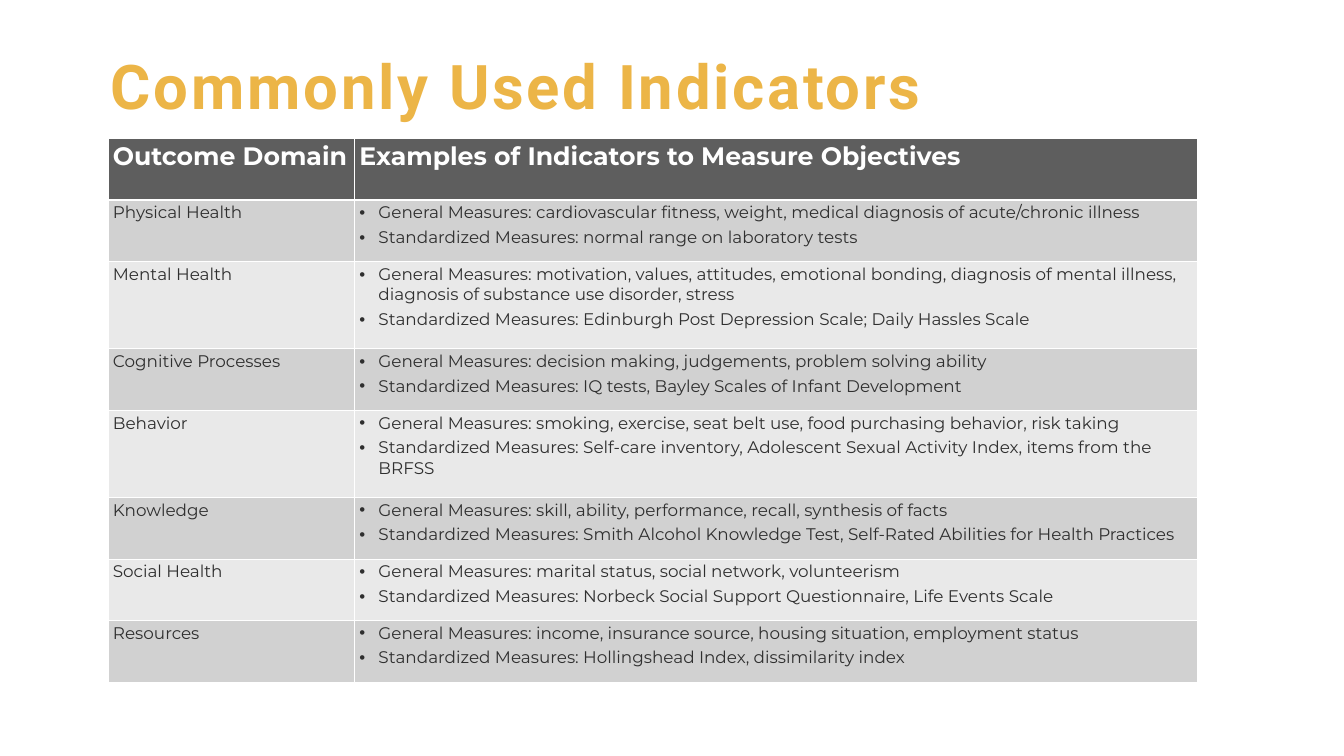
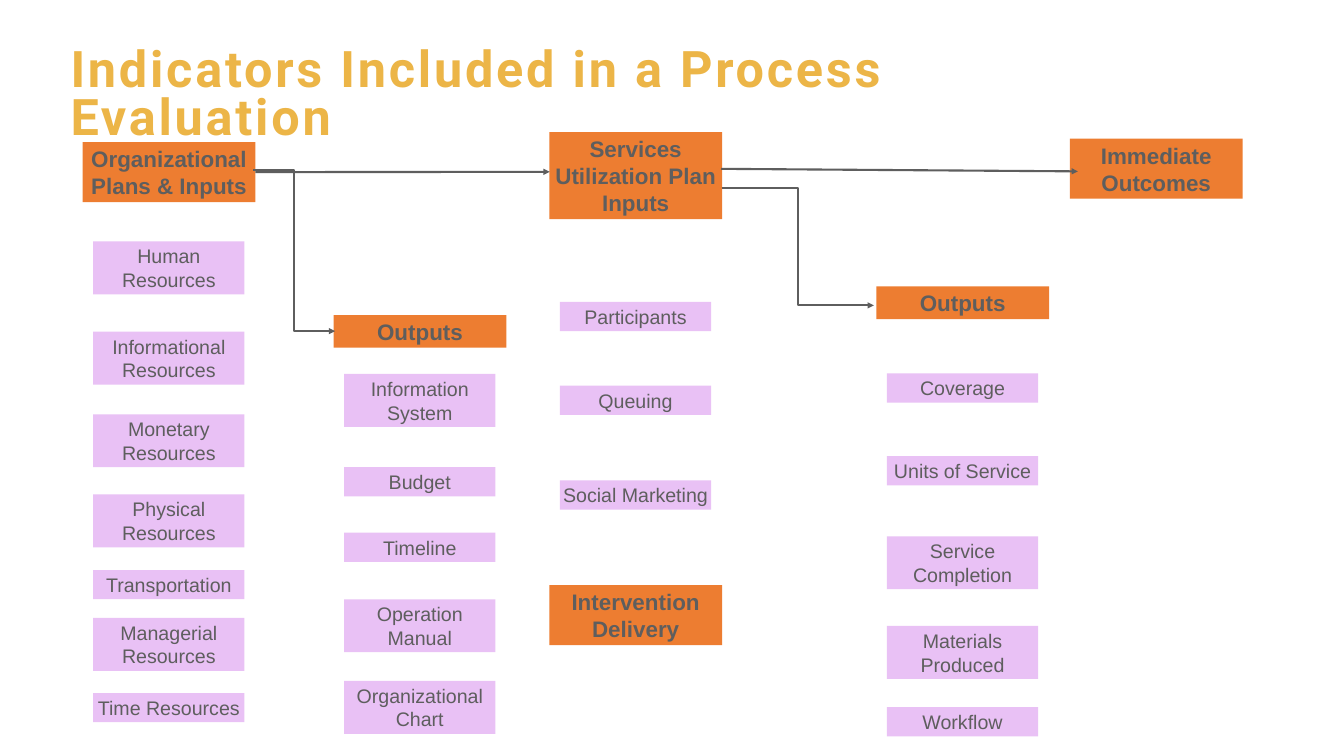
"""Build two slides on health indicators: a table and a process chart."""
import pptx
import pptx.dml.color
import pptx.enum.shapes
import pptx.enum.text
import pptx.oxml
import pptx.oxml.ns
import pptx.util

SCALE = 9144
GOLD, GREY, WHITE, INK = "ECB547", "5E5E5E", "FFFFFF", "2F2F2F"
ORANGE, LILAC = "ED7D31", "E9C1F5"
BANDS = ("D1D1D1", "E9E9E9")
INSET = 6
HEAD_WIDTH, ITEM_WIDTH, ITEM_SHIFT = 343, 300, 21

TABLE_HEAD = ("Outcome Domain", "Examples of Indicators to Measure Objectives")
LABELS = ("General Measures: ", "Standardized Measures: ")
DOMAINS = [
    ("Physical Health", 122,
     "cardiovascular fitness, weight, medical diagnosis of acute/chronic illness",
     "normal range on laboratory tests"),
    ("Mental Health", 173,
     "motivation, values, attitudes, emotional bonding, diagnosis of mental illness, "
     "diagnosis of substance use disorder, stress",
     "Edinburgh Post Depression Scale; Daily Hassles Scale"),
    ("Cognitive Processes", 122,
     "decision making, judgements, problem solving ability",
     "IQ tests, Bayley Scales of Infant Development"),
    ("Behavior", 173,
     "smoking, exercise, seat belt use, food purchasing behavior, risk taking",
     "Self-care inventory, Adolescent Sexual Activity Index, items from the BRFSS"),
    ("Knowledge", 122,
     "skill, ability, performance, recall, synthesis of facts",
     "Smith Alcohol Knowledge Test, Self-Rated Abilities for Health Practices"),
    ("Social Health", 122,
     "marital status, social network, volunteerism",
     "Norbeck Social Support Questionnaire, Life Events Scale"),
    ("Resources", 122,
     "income, insurance source, housing situation, employment status",
     "Hollingshead Index, dissimilarity index"),
]

STAGES = [
    (164, [("Organizational Plans & Inputs", 282, 2)],
     [("Human Resources", 479, 2), ("Informational Resources", 658, 2),
      ("Monetary Resources", 822, 2), ("Physical Resources", 981, 2),
      ("Transportation", 1131, 1), ("Managerial Resources", 1226, 2),
      ("Time Resources", 1375, 1)]),
    (662, [("Outputs", 625, 1)],
     [("Information System", 742, 2), ("Budget", 927, 1), ("Timeline", 1057, 1),
      ("Operation Manual", 1189, 2), ("Organizational Chart", 1351, 2)]),
    (1090, [("Services Utilization Plan Inputs", 262, 3),
            ("Intervention Delivery", 1161, 2)],
     [("Participants", 599, 1), ("Queuing", 765, 1), ("Social Marketing", 953, 1)]),
    (1739, [("Outputs", 568, 1)],
     [("Coverage", 741, 1), ("Units of Service", 905, 1),
      ("Service Completion", 1064, 2), ("Materials Produced", 1242, 2),
      ("Workflow", 1403, 1)]),
    (2123, [("Immediate Outcomes", 275, 2)], []),
]


def px(*sizes):
    """Turn px lengths into a list of EMU."""
    return [pptx.util.Emu(size * SCALE) for size in sizes]


def shade(code):
    """Turn a hex string into a colour."""
    return pptx.dml.color.RGBColor.from_string(code)


def paint(part, code):
    """Give a shape or cell a solid fill."""
    part.fill.solid()
    part.fill.fore_color.rgb = shade(code)


def style(para, font, size, code, bold=False):
    """Format every run of a paragraph."""
    for run in para.runs:
        run.font.name = font
        run.font.size = pptx.util.Pt(size)
        run.font.bold = bold
        run.font.color.rgb = shade(code)


def add_xml(parent, tag, place=None, **attrs):
    """Add a DrawingML element to a parent and return it."""
    node = pptx.oxml.parse_xml(f"<a:{tag} {pptx.oxml.ns.nsdecls('a')}/>")
    for key, value in attrs.items():
        node.set(key, str(value))
    parent.insert(len(parent) if place is None else place, node)
    return node


def set_frame(shape):
    """Set wrapping and insets of a shape and return its text frame."""
    frame = shape.text_frame
    frame.word_wrap = True
    frame.margin_left, frame.margin_top, frame.margin_right, frame.margin_bottom = px(*[INSET] * 4)
    return frame


def add_title(slide, text, left, top, size):
    """Add a gold title with wide letter spacing."""
    frame = set_frame(slide.shapes.add_textbox(*px(left, top, 2133, 165)))
    frame.text = text
    para = frame.paragraphs[0]
    para.line_spacing = 0.8
    style(para, "Roboto", size, GOLD, True)
    para.runs[0].font._element.set("spc", "400")


def add_box(slide, text, left, top, width, height, fill, size, bold):
    """Add a filled box with centred text."""
    box = slide.shapes.add_shape(pptx.enum.shapes.MSO_SHAPE.RECTANGLE,
                                 *px(left, top, width, height))
    box.shadow.inherit = False
    paint(box, fill)
    box.line.fill.background()
    frame = set_frame(box)
    frame.auto_size = pptx.enum.text.MSO_AUTO_SIZE.SHAPE_TO_FIT_TEXT
    frame.vertical_anchor = pptx.enum.text.MSO_ANCHOR.MIDDLE
    frame.text = text
    para = frame.paragraphs[0]
    para.alignment = pptx.enum.text.PP_ALIGN.CENTER
    style(para, "Arial", size, GREY, bold)
    return box


def add_head(slide, text, left, top, lines):
    """Add an orange stage heading."""
    return add_box(slide, text, left, top, HEAD_WIDTH, 11 + 54 * lines, ORANGE, 32, True)


def add_item(slide, text, left, top, lines):
    """Add a lilac indicator box."""
    return add_box(slide, text, left, top, ITEM_WIDTH, 11 + 47 * lines, LILAC, 28, False)


def add_arrow(slide, kind, *ends):
    """Add a grey arrow between two points."""
    arrow = slide.shapes.add_connector(kind, *px(*ends))
    arrow.line.color.rgb = shade(GREY)
    arrow.line.width = pptx.util.Pt(3)
    add_xml(arrow.line._get_or_add_ln(), "tailEnd", type="triangle")
    add_xml(arrow._element.spPr, "effectLst")
    return arrow


def fill_cell(cell, lines, fill, size, code, head=False, marks=False):
    """Write a table cell with its fill, borders and optional bullets."""
    paint(cell, fill)
    for place, side in enumerate("LRTB"):
        width = 3 if head and side == "B" else 1
        edge = add_xml(cell._tc.tcPr, "ln" + side, place, w=pptx.util.Pt(width))
        add_xml(add_xml(edge, "solidFill"), "srgbClr", val=WHITE)
    cell.text_frame.text = "\n".join(lines)
    for para in cell.text_frame.paragraphs:
        if marks:
            props = para._p.get_or_add_pPr()
            indent = px(38)[0]
            props.set("marL", str(indent))
            props.set("indent", str(-indent))
            add_xml(props, "buFont", typeface="Arial")
            add_xml(props, "buChar", char="•")
        para.space_after = pptx.util.Pt(6)
        style(para, "Montserrat", size, code, head)


def add_domains(slide):
    """Add the table of outcome domains."""
    heights = [122] + [row[1] for row in DOMAINS]
    grid = slide.shapes.add_table(len(heights), 2, *px(214, 275, 2162, sum(heights))).table
    for column, width in zip(grid.columns, px(489, 1673)):
        column.width = width
    for row, height in zip(grid.rows, px(*heights)):
        row.height = height
    for index, text in enumerate(TABLE_HEAD):
        fill_cell(grid.cell(0, index), [text], GREY, 36, WHITE, head=True)
    for index, (name, _, *texts) in enumerate(DOMAINS):
        band = BANDS[index % 2]
        lines = [label + text for label, text in zip(LABELS, texts)]
        fill_cell(grid.cell(index + 1, 0), [name], band, 24, INK)
        fill_cell(grid.cell(index + 1, 1), lines, band, 24, INK, marks=True)


def add_stages(slide):
    """Add the stage columns and the arrows between them."""
    heads = []
    for left, titles, items in STAGES:
        heads += [add_head(slide, text, left, top, lines) for text, top, lines in titles]
        for text, top, lines in items:
            add_item(slide, text, left + ITEM_SHIFT, top, lines)
    kinds = pptx.enum.shapes.MSO_CONNECTOR
    add_arrow(slide, kinds.ELBOW, 503, 337, 665, 657)
    add_arrow(slide, kinds.ELBOW, 1432, 373, 1734, 606)
    first = add_arrow(slide, kinds.STRAIGHT, 507, 342, 1091, 341)
    first.begin_connect(heads[0], 3)
    add_arrow(slide, kinds.STRAIGHT, 1431, 335, 2139, 340)


def main():
    """Build and save the slides."""
    deck = pptx.Presentation()
    deck.slide_width, deck.slide_height = px(2667, 1500)
    blank = deck.slide_layouts[6]
    slide = deck.slides.add_slide(blank)
    add_title(slide, "Commonly Used Indicators", 214, 118, 88)
    add_domains(slide)
    slide = deck.slides.add_slide(blank)
    add_title(slide, "Indicators Included in a Process Evaluation", 134, 90, 72)
    add_stages(slide)
    deck.save("out.pptx")


if __name__ == "__main__":
    main()
